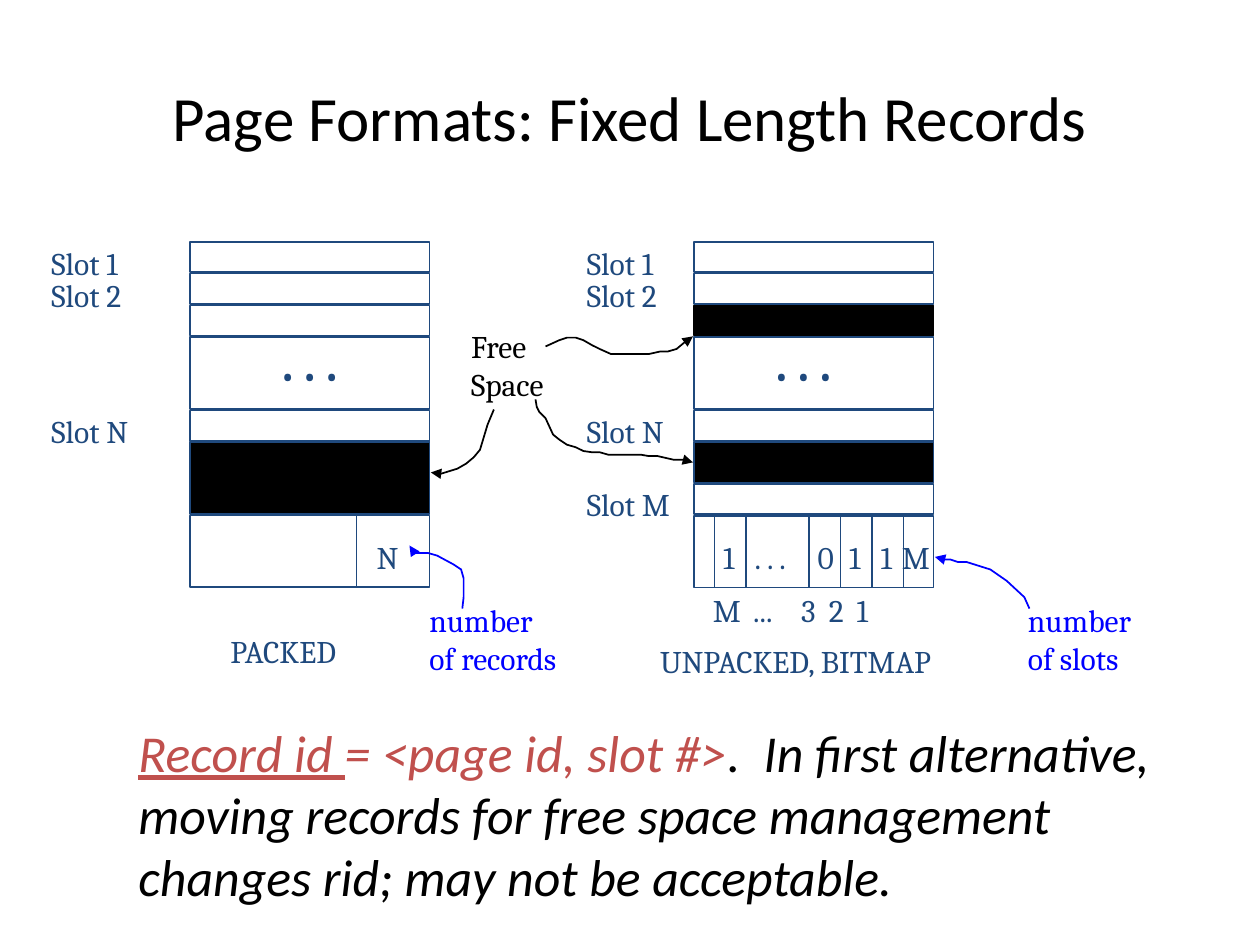
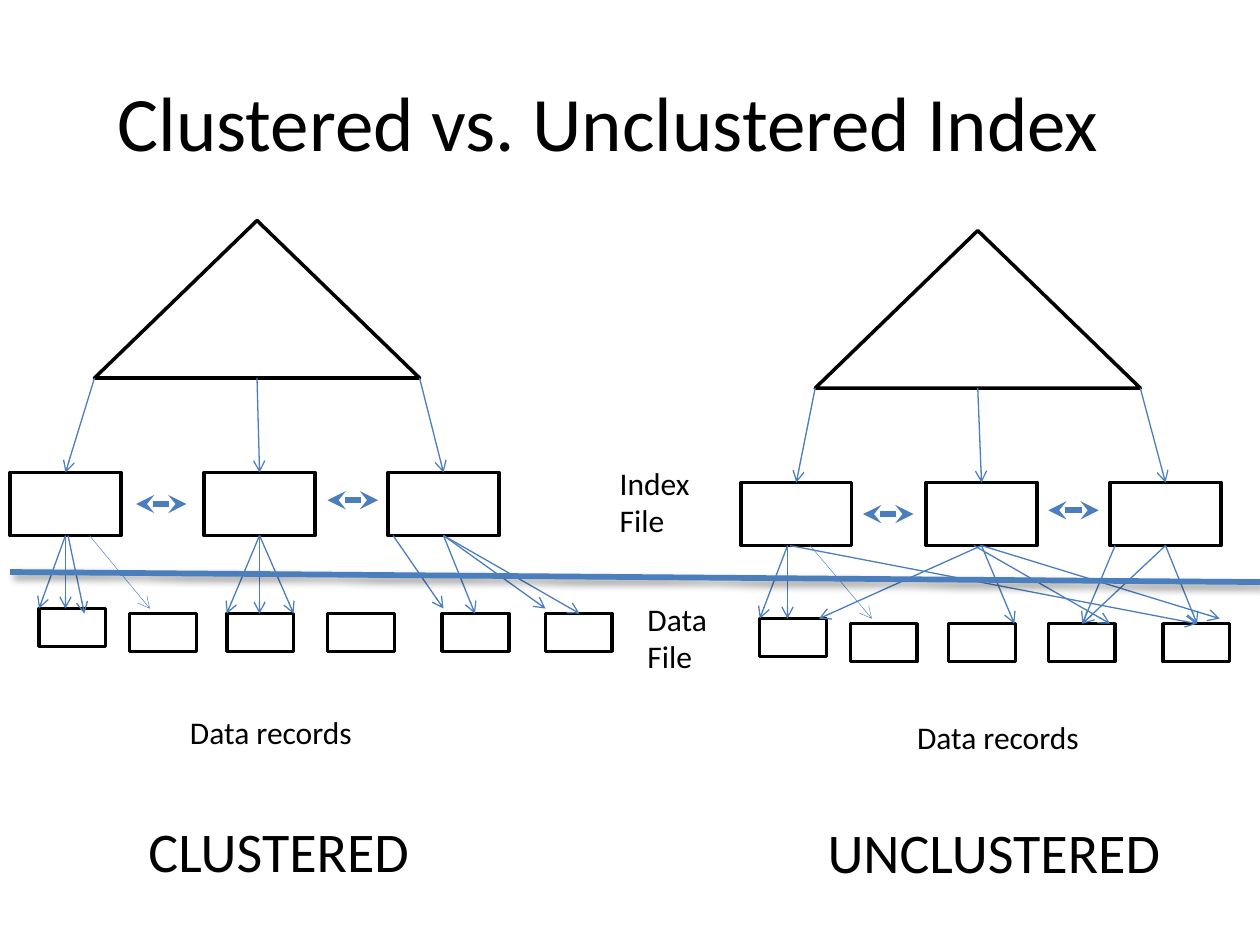
from dataclasses import dataclass, field
from typing import Any, NamedTuple

from lxml.etree import SubElement
from pptx import Presentation
from pptx.dml.color import RGBColor
from pptx.enum.shapes import MSO_CONNECTOR, MSO_SHAPE
from pptx.enum.text import MSO_ANCHOR, MSO_AUTO_SIZE as AutoSize, PP_ALIGN
from pptx.oxml.ns import qn
from pptx.util import Emu, Inches, Pt

SLIDE_WIDTH, SLIDE_HEIGHT = Inches(10), Inches(7.5)
COLUMN, ROW = SLIDE_WIDTH / 100, SLIDE_HEIGHT / 75

BLACK = RGBColor(0x00, 0x00, 0x00)
NAVY = RGBColor(0x1F, 0x49, 0x7D)
BLUE = RGBColor(0x00, 0x00, 0xFF)
RED = RGBColor(0xC0, 0x50, 0x4D)
STEEL = RGBColor(0x4B, 0x7E, 0xBC)

SANS, SERIF = "Calibri", "Cambria"
Point = tuple[float, float]


class Box(NamedTuple):
    left: float
    top: float
    width: float
    height: float


class Run(NamedTuple):
    text: str
    color: RGBColor = BLACK
    format: dict[str, Any] = {}


class Stroke(NamedTuple):
    color: RGBColor
    width: float
    head: str = ""
    tail: str = ""


class Label(NamedTuple):
    left: float
    top: float
    width: float
    text: str
    color: RGBColor = NAVY
    font: str = SERIF
    size: float = 18
    bold: bool = False
    tabs: tuple[float, ...] = ()


class Slot(NamedTuple):
    height: float
    fill: RGBColor | None = None
    line: RGBColor = NAVY


class Curve(NamedTuple):
    color: RGBColor
    points: list[Point]


class Pointer(NamedTuple):
    start: float
    end: float
    depth: float
    width: float = 0.75


@dataclass
class RecordPage:
    left: float
    slots: list[Slot]
    dividers: list[float]
    labels: list[Label] = field(default_factory=list)


@dataclass
class IndexTree:
    left: float
    top: float
    nodes: list[float]
    siblings: list[Point]
    records: list[float]
    pointers: list[Pointer]
    labels: list[Label]


def x(columns: float) -> Emu:
    return Emu(round(columns * COLUMN))


def y(rows: float) -> Emu:
    return Emu(round(rows * ROW))


def place(box: Box) -> tuple[Emu, Emu, Emu, Emu]:
    return x(box.left), y(box.top), x(box.width), y(box.height)


def apply(target: Any, values: dict[str, Any]) -> None:
    for name, value in values.items():
        setattr(target, name, value)


def set_stroke(shape: Any, stroke: Stroke) -> None:
    shape.line.color.rgb = stroke.color
    shape.line.width = Pt(stroke.width)
    outline = shape.element.spPr.find(qn("a:ln"))
    for tag, kind in (("a:headEnd", stroke.head), ("a:tailEnd", stroke.tail)):
        if kind:
            SubElement(outline, qn(tag), type=kind)


def add_text(slide: Any, box: Box, paragraphs: list[list[Run]], frame_format: dict[str, Any],
             alignment: PP_ALIGN = PP_ALIGN.LEFT) -> Any:
    shape = slide.shapes.add_textbox(*place(box))
    frame = shape.text_frame
    apply(frame, frame_format)
    for index, runs in enumerate(paragraphs):
        paragraph = frame.add_paragraph() if index else frame.paragraphs[0]
        paragraph.alignment = alignment
        for item in runs:
            run = paragraph.add_run()
            run.text = item.text
            apply(run.font, item.format)
            run.font.color.rgb = item.color
    return shape


def add_title(slide: Any, box: Box, text: str, size: float) -> None:
    run = Run(text, BLACK, {"name": SANS, "size": Pt(size)})
    add_text(slide, box, [[run]], {"word_wrap": True, "vertical_anchor": MSO_ANCHOR.MIDDLE},
             PP_ALIGN.CENTER)


def add_label(slide: Any, label: Label) -> None:
    style = {"name": label.font, "size": Pt(label.size), "bold": label.bold}
    lines = label.text.split("\n")
    box = Box(label.left, label.top, label.width, 1 + len(lines) * label.size / 6)
    wrap = bool(label.tabs)
    shape = add_text(slide, box, [[Run(line, label.color, style)] for line in lines],
                     {"word_wrap": wrap, "auto_size": AutoSize.NONE if wrap else AutoSize.SHAPE_TO_FIT_TEXT})
    if label.tabs:
        stops = SubElement(next(shape.element.iter(qn("a:pPr"))), qn("a:tabLst"))
        for stop in label.tabs:
            SubElement(stops, qn("a:tab"), pos=str(x(stop)), algn="l")


def add_outline(slide: Any, kind: MSO_SHAPE, box: Box, stroke: Stroke, fill: RGBColor | None = None) -> None:
    shape = slide.shapes.add_shape(kind, *place(box))
    shape.shadow.inherit = False
    if fill is None:
        shape.fill.background()
    else:
        shape.fill.solid()
        shape.fill.fore_color.rgb = fill
    set_stroke(shape, stroke)


def add_line(slide: Any, start: Point, end: Point, stroke: Stroke) -> Any:
    line = slide.shapes.add_connector(MSO_CONNECTOR.STRAIGHT, x(start[0]), y(start[1]), x(end[0]), y(end[1]))
    set_stroke(line, stroke)
    return SubElement(line.element.spPr, qn("a:effectLst"))


def add_curve(slide: Any, curve: Curve) -> None:
    start, *rest = [(x(column), y(row)) for column, row in curve.points]
    builder = slide.shapes.build_freeform(*start)
    builder.add_line_segments(rest, close=False)
    shape = builder.convert_to_shape()
    shape.shadow.inherit = False
    shape.fill.background()
    set_stroke(shape, Stroke(curve.color, 1, tail="triangle"))


PAGE_TOP, PAGE_WIDTH, SLOT_GAP = 19.2, 19, 0.12
THIN, TALL = 2.4, 5.7
BIT_LEFTS = [56.7, 59.2, 64.2, 66.7, 69.2]
BITS = ["1", ". . .", "0", "1", "1"]


def slot_labels(left: float) -> list[Label]:
    return [Label(left, 18.9, 8.2, "Slot 1"), Label(left, 21.4, 8.2, "Slot 2"), Label(left, 32.2, 9.1, "Slot N")]


PACKED = RecordPage(
    15.1,
    [Slot(THIN), Slot(THIN), Slot(THIN), Slot(TALL), Slot(THIN), Slot(TALL, BLACK), Slot(TALL)],
    [28.3],
    slot_labels(3.1) + [
        Label(21.4, 25.9, 7, ". . .", size=28, bold=True),
        Label(28.9, 42.2, 4.2, "N"),
        Label(17.3, 49.7, 12.6, "PACKED"),
        Label(33.1, 47.2, 13.2, "number\nof records", BLUE),
        Label(36.4, 25.5, 8.5, "Free\nSpace", BLACK),
    ])
UNPACKED = RecordPage(
    55.1,
    [Slot(THIN), Slot(THIN), Slot(THIN, BLACK, BLACK), Slot(TALL), Slot(THIN), Slot(3.2, BLACK),
     Slot(THIN), Slot(TALL)],
    BIT_LEFTS + [71.7],
    slot_labels(45.6) + [
        Label(45.6, 38, 9.3, "Slot M"),
        Label(60.6, 25.9, 7, ". . .", size=28, bold=True),
        Label(70.6, 42.2, 4.5, "M"),
        Label(55.6, 46.4, 16.4, "M\t...\t3\t2\t1", tabs=(3.2, 7, 9.2, 11.4)),
        Label(51.4, 50.5, 27.6, "UNPACKED, BITMAP"),
        Label(80.6, 47.2, 10.9, "number\nof slots", BLUE),
    ] + [Label(left - 0.3, 42.2, 5.2 if len(bit) > 1 else 3.4, bit) for left, bit in zip(BIT_LEFTS, BITS)])

CURVES = [
    Curve(BLACK, [(43.3, 27.5), (44.4, 27), (45, 26.8), (45.7, 26.8), (46.3, 27), (47, 27.4), (47.6, 27.7),
                  (48.5, 28.1), (51.5, 28.1), (52.4, 27.9), (53, 27.9), (53.7, 27.7), (54.3, 27.2),
                  (55, 26.8), (55, 26.7)]),
    Curve(BLACK, [(42.5, 31.7), (42.6, 32.3), (42.8, 32.7), (43.3, 33.2), (43.9, 34.5), (44.4, 34.9),
                  (45, 35.3), (45.7, 35.5), (46.3, 35.8), (47, 35.9), (47.6, 35.9), (48.3, 36.1),
                  (50.9, 36.1), (51.5, 36.2), (52.2, 36.2), (53.5, 36.5), (54.8, 36.5), (55, 36.7)]),
    Curve(BLACK, [(39.2, 32.5), (38.7, 33.7), (38.1, 35.7), (37.6, 36.3), (37, 36.8), (36.3, 37.2),
                  (35, 37.6), (34.4, 37.6), (34.2, 37.5)]),
    Curve(BLUE, [(36.7, 48.3), (36.8, 47.4), (36.8, 45.9), (36.6, 45.2), (36, 44.8), (34.7, 44.1),
                 (34, 43.9), (32.7, 43.9), (32.5, 43.3)]),
    Curve(BLUE, [(81.7, 48.3), (81.3, 47.4), (79.9, 46.1), (78.6, 45.2), (76.7, 44.6), (76, 44.6),
                 (75.4, 44.4), (74.7, 44.4), (74.2, 44.2)]),
]


def draw_record_page(slide: Any, page: RecordPage) -> None:
    top = PAGE_TOP
    for slot in page.slots:
        add_outline(slide, MSO_SHAPE.RECTANGLE, Box(page.left, top, PAGE_WIDTH, slot.height),
                    Stroke(slot.line, 1), slot.fill)
        top += slot.height + SLOT_GAP
    bottom = top - SLOT_GAP
    for column in page.dividers:
        add_line(slide, (column, bottom - TALL), (column, bottom), Stroke(NAVY, 1))
    for label in page.labels:
        add_label(slide, label)


def draw_page_formats(slide: Any) -> None:
    add_title(slide, Box(5, 3, 90, 12.5), "Page Formats: Fixed Length Records", 36)
    style = {"name": SANS, "size": Pt(29.6), "italic": True}
    add_text(slide, Box(10, 56.7, 84.2, 15.8), [[
        Run("Record id ", RED, style | {"underline": True}),
        Run("= <page id, slot #>", RED, style),
        Run(".  In first alternative, moving records for free space management changes rid; "
            "may not be acceptable.", BLACK, style),
    ]], {"word_wrap": True})
    for page in (PACKED, UNPACKED):
        draw_record_page(slide, page)
    for curve in CURVES:
        add_curve(slide, curve)


ROOT_WIDTH, ROOT_HEIGHT = 25.8, 12.5
NODE_WIDTH, NODE_HEIGHT, NODE_DEPTH, POINTER_DEPTH = 8.8, 5, 20, 25
RECORD_WIDTH, RECORD_HEIGHT, FIRST_DEPTH, RECORD_DEPTH = 5.3, 3, 30.8, 31.2
HAIRLINE = 0.25

CLUSTERED = IndexTree(
    7.5, 17.5, [0.8, 16.2, 30.8], [(10.8, 22.5), (26, 22.2)], [3.1, 10.3, 18, 26, 35.1, 43.3],
    [Pointer(5.4, 6.7, RECORD_DEPTH), Pointer(7.1, 11.9, FIRST_DEPTH, HAIRLINE),
     Pointer(5.2, 5.2, FIRST_DEPTH), Pointer(5.2, 3.1, FIRST_DEPTH),
     Pointer(20.6, 18, RECORD_DEPTH), Pointer(20.6, 20.6, RECORD_DEPTH), Pointer(20.6, 23.3, RECORD_DEPTH),
     Pointer(31.2, 35.2, FIRST_DEPTH), Pointer(35.2, 37.7, RECORD_DEPTH),
     Pointer(35.2, 43.3, FIRST_DEPTH), Pointer(35.2, 46, RECORD_DEPTH)],
    [Label(10.8, 64.3, 22.9, "CLUSTERED", BLACK, SANS, 32),
     Label(14.1, 56.1, 15.6, "Data records", BLACK, SANS)])
UNCLUSTERED = IndexTree(
    64.7, 18.3, [58.8, 73.5, 88.1], [(68.5, 22.5), (83.2, 22.2)], [60.3, 67.5, 75.3, 83.2, 92.3],
    [Pointer(62.7, 95, RECORD_DEPTH), Pointer(64.3, 69.2, FIRST_DEPTH, HAIRLINE),
     Pointer(62.5, 62.5, FIRST_DEPTH), Pointer(62.5, 60.3, FIRST_DEPTH),
     Pointer(77.9, 65, FIRST_DEPTH), Pointer(77.9, 96.8, FIRST_DEPTH), Pointer(77.9, 80.5, RECORD_DEPTH),
     Pointer(88.5, 85.9, RECORD_DEPTH), Pointer(92.5, 95, RECORD_DEPTH),
     Pointer(92.5, 85.9, RECORD_DEPTH), Pointer(77.3, 88.1, RECORD_DEPTH)],
    [Label(64.7, 64.4, 28.7, "UNCLUSTERED", BLACK, SANS, 32),
     Label(71.8, 56.5, 15.6, "Data records", BLACK, SANS)])
FILE_LABELS = [Label(48.2, 36.3, 7.6, "Index\nFile", BLACK, SANS), Label(50.4, 47.1, 6.8, "Data\nFile", BLACK, SANS)]


def draw_index_tree(slide: Any, tree: IndexTree) -> None:
    frame, arrow = Stroke(BLACK, 2), Stroke(STEEL, 0.75, tail="arrow")
    add_outline(slide, MSO_SHAPE.ISOSCELES_TRIANGLE, Box(tree.left, tree.top, ROOT_WIDTH, ROOT_HEIGHT), frame)
    for index, left in enumerate(tree.nodes):
        top = tree.top + NODE_DEPTH
        add_outline(slide, MSO_SHAPE.RECTANGLE, Box(left, top, NODE_WIDTH, NODE_HEIGHT), frame)
        add_line(slide, (tree.left + index * ROOT_WIDTH / 2, tree.top + ROOT_HEIGHT),
                 (left + NODE_WIDTH / 2, top), arrow)
    for left, depth in tree.siblings:
        add_line(slide, (left, tree.top + depth), (left + 4, tree.top + depth),
                 Stroke(STEEL, 3.5, "stealth", "stealth"))
    for index, left in enumerate(tree.records):
        depth = RECORD_DEPTH if index else FIRST_DEPTH
        add_outline(slide, MSO_SHAPE.RECTANGLE, Box(left, tree.top + depth, RECORD_WIDTH, RECORD_HEIGHT), frame)
    for pointer in tree.pointers:
        add_line(slide, (pointer.start, tree.top + POINTER_DEPTH), (pointer.end, tree.top + pointer.depth),
                 arrow._replace(width=pointer.width))
    for label in tree.labels:
        add_label(slide, label)


def draw_index_comparison(slide: Any) -> None:
    add_title(slide, Box(3.3, 3.3, 90, 12.5), "Clustered vs. Unclustered Index", 44)
    for tree in (CLUSTERED, UNCLUSTERED):
        draw_index_tree(slide, tree)
    effects = add_line(slide, (0.8, 45.4), (100, 46.2), Stroke(STEEL, 3.25))
    shadow = SubElement(effects, qn("a:outerShdw"), blurRad=str(Pt(4)), dist=str(Pt(3)), dir="2700000")
    color = SubElement(shadow, qn("a:srgbClr"), val=str(BLACK))
    SubElement(color, qn("a:alpha"), val="40000")
    for label in FILE_LABELS:
        add_label(slide, label)


def main() -> None:
    presentation = Presentation()
    apply(presentation, {"slide_width": SLIDE_WIDTH, "slide_height": SLIDE_HEIGHT})
    for draw in (draw_page_formats, draw_index_comparison):
        draw(presentation.slides.add_slide(presentation.slide_layouts[6]))
    presentation.save("out.pptx")


if __name__ == "__main__":
    main()
